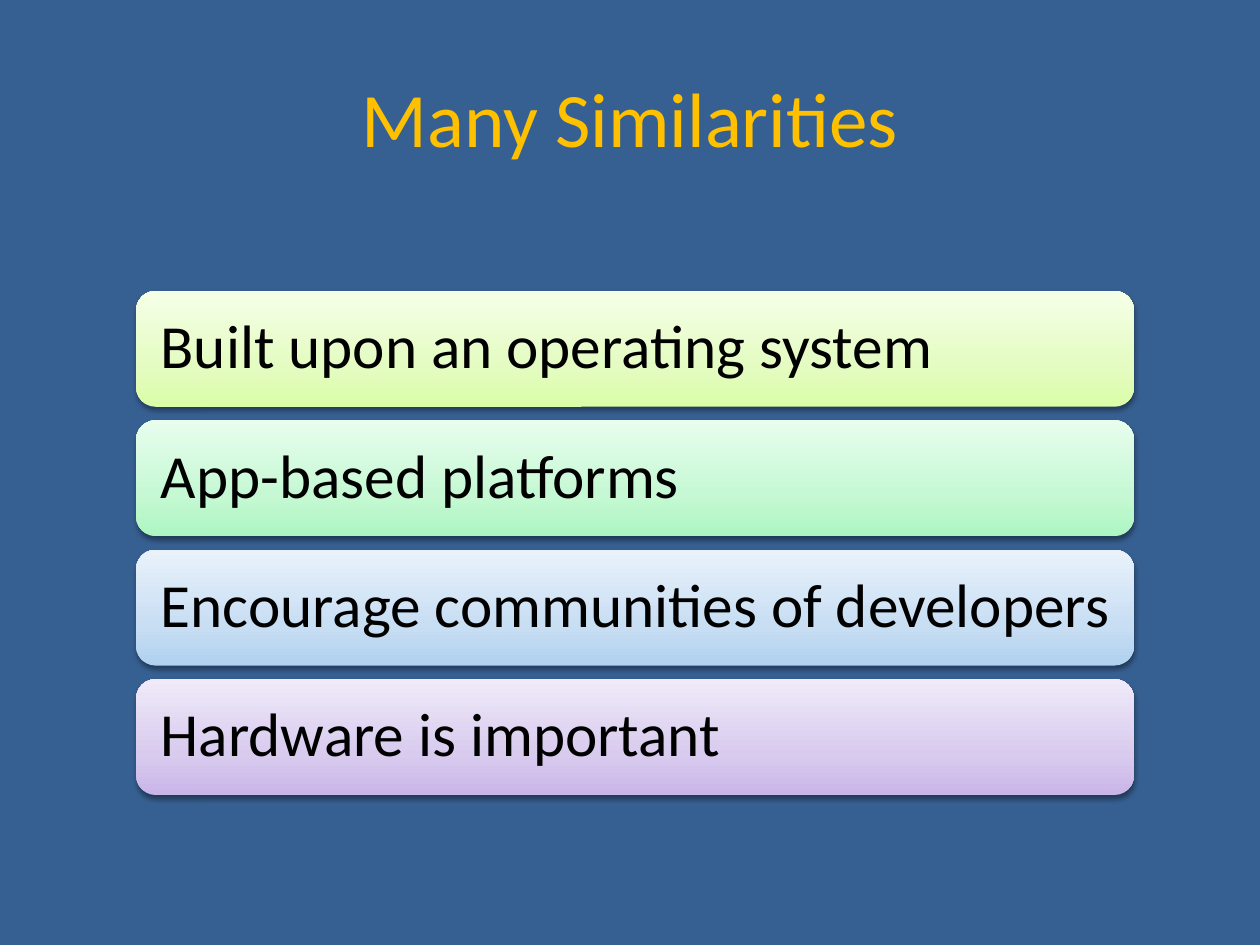
from copy import deepcopy

from lxml import etree
from pptx import Presentation
from pptx.dml.color import RGBColor
from pptx.enum.shapes import MSO_SHAPE
from pptx.enum.text import MSO_ANCHOR, PP_ALIGN
from pptx.oxml.ns import qn
from pptx.util import Pt

ROUNDED = MSO_SHAPE.ROUNDED_RECTANGLE
MIDDLE = MSO_ANCHOR.MIDDLE
LEFT, CENTER = PP_ALIGN.LEFT, PP_ALIGN.CENTER
FONT = "Calibri"
COLORS = {"background": "376092", "title": "FFC000", "text": "000000", "shadow": "000000"}
STOP_POSITIONS = (0, 0.35, 1)
BARS = [
    ("Built upon an operating system", ("DAFDA7", "E4FCC2", "F5FFE7")),
    ("App-based platforms", ("ACF6C1", "C5F8D3", "E8FDEE")),
    ("Encourage communities of developers", ("B0D1EF", "C8DEF3", "E9F2FB")),
    ("Hardware is important", ("C9B5E8", "D8CBEE", "F0EAF9")),
]


def add_text(frame, text, size, color, align):
    """Write one run of text into the first paragraph of a frame."""
    frame.word_wrap = True
    frame.vertical_anchor = MIDDLE
    para = frame.paragraphs[0]
    para.alignment = align
    span = para.add_run()
    span.text = text
    span.font.size = Pt(size)
    span.font.name = FONT
    span.font.color.rgb = RGBColor.from_string(color)
    return para


def fill_gradient(shape, colors):
    """Fill a shape with a three-stop gradient that runs from bottom to top."""
    shape.fill.gradient()
    shape.fill.gradient_angle = 90
    first_stop = next(shape._element.spPr.iter(qn("a:gs")))
    first_stop.addnext(deepcopy(first_stop))
    for stop, position, color in zip(shape.fill.gradient_stops, STOP_POSITIONS, colors):
        stop.position = position
        stop.color.rgb = RGBColor.from_string(color)


def add_shadow(shape):
    """Give a shape a soft shadow just below it."""
    shape.shadow.inherit = False
    effects = shape._element.spPr.find(qn("a:effectLst"))
    shadow = etree.SubElement(effects, qn("a:outerShdw"), blurRad=str(Pt(3.1)),
                              dist=str(Pt(1.6)), dir="5400000", rotWithShape="0")
    color = etree.SubElement(shadow, qn("a:srgbClr"), val=COLORS["shadow"])
    etree.SubElement(color, qn("a:alpha"), val="38000")


def place_title(page, left, top, width, height):
    """Place and format the title placeholder."""
    title = page.shapes.title
    title.left, title.top, title.width, title.height = map(Pt, (left, top, width, height))
    add_text(title.text_frame, "Many Similarities", 44, COLORS["title"], CENTER)


def add_bar(group, text, colors, left, top, width, height):
    """Add one labelled gradient bar."""
    bar = group.shapes.add_shape(ROUNDED, Pt(left), Pt(top), Pt(width), Pt(height))
    fill_gradient(bar, colors)
    bar.line.fill.background()
    add_shadow(bar)
    frame = bar.text_frame
    frame.margin_left = frame.margin_top = frame.margin_bottom = Pt(10.8)
    frame.margin_right = Pt(10)
    para = add_text(frame, text, 35, COLORS["text"], LEFT)
    para.line_spacing = 0.9


def add_bar_list(page, left, top, width, height, gap=7.8):
    """Stack the bars evenly inside the given box."""
    group = page.shapes.add_group_shape()
    bar_height = (height - gap * (len(BARS) - 1)) / len(BARS)
    for index, (text, colors) in enumerate(BARS):
        bar_top = top + index * (bar_height + gap)
        add_bar(group, text, colors, left, bar_top, width, bar_height)


def main():
    """Build the slide and save the deck."""
    deck = Presentation()
    deck.slide_width, deck.slide_height = Pt(720), Pt(540)
    page = deck.slides.add_slide(deck.slide_layouts[5])
    page.background.fill.solid()
    page.background.fill.fore_color.rgb = RGBColor.from_string(COLORS["background"])
    place_title(page, 36, 21.6, 648, 90)
    add_bar_list(page, 77.8, 166.3, 570.2, 288)
    deck.save("out.pptx")


if __name__ == "__main__":
    main()
